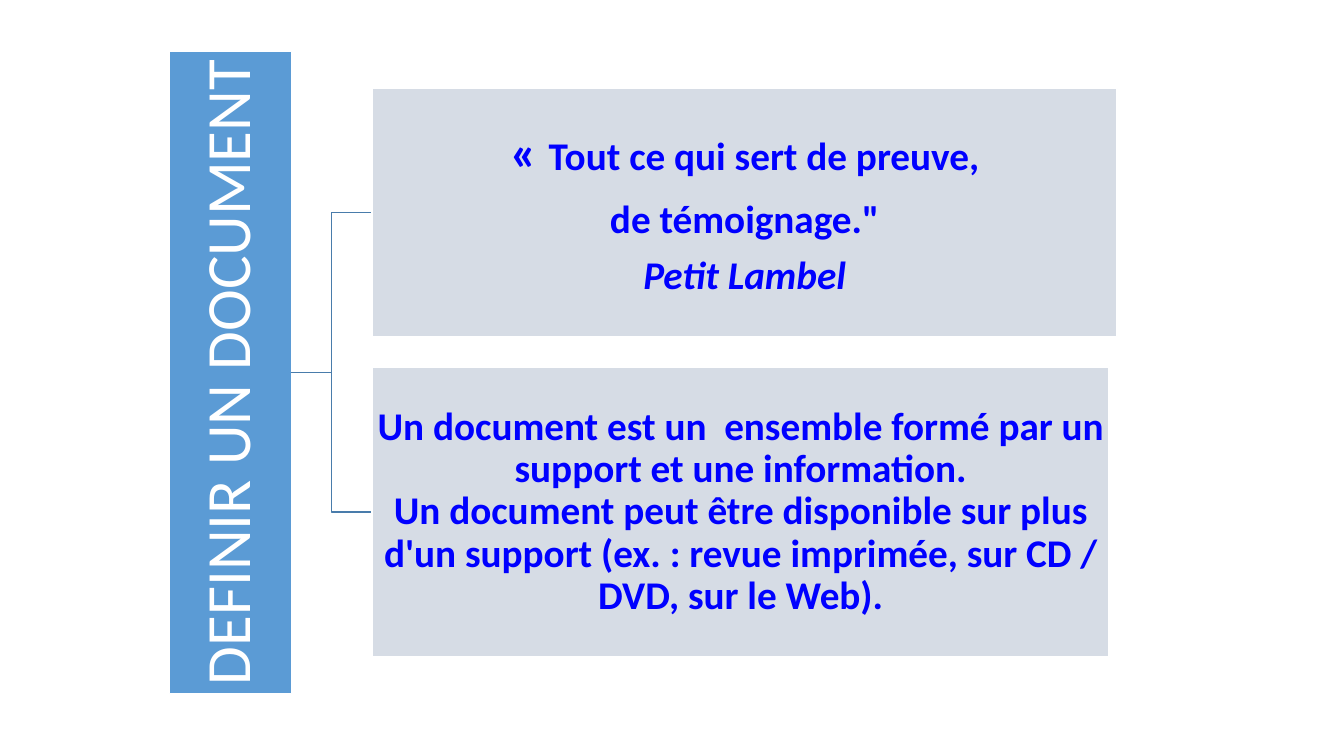
from dataclasses import dataclass

from pptx import Presentation
from pptx.dml.color import RGBColor
from pptx.enum import text
from pptx.shapes.autoshape import Shape
from pptx.enum import shapes
from pptx.slide import Slide
from pptx.util import Inches, Pt


@dataclass(frozen=True)
class Theme:
    font: str = "Calibri"
    bar: RGBColor = RGBColor(0x5B, 0x9B, 0xD5)
    panel: RGBColor = RGBColor(0xD6, 0xDC, 0xE5)
    link: RGBColor = RGBColor(0x49, 0x7C, 0xAB)
    white: RGBColor = RGBColor(0xFF, 0xFF, 0xFF)
    blue: RGBColor = RGBColor(0x00, 0x00, 0xFF)
    title: float = 45
    quote: float = 36
    body: float = 28


THEME = Theme()


@dataclass(frozen=True)
class Part:
    """A stretch of text in one style."""
    words: str
    size: float = THEME.body
    color: RGBColor = THEME.blue
    bold: bool = True
    italic: bool = False


@dataclass(frozen=True)
class Box:
    left: float
    top: float
    width: float
    height: float
    inset: float
    fill: RGBColor
    lines: list[list[Part]]

    @property
    def middle(self) -> float:
        return self.top + self.height / 2


BAR = Box(-0.9, 3.09, 6.37, 1.21, 0.03, THEME.bar,
          [[Part("DEFINIR UN DOCUMENT", THEME.title, THEME.white, bold=False)]])
PANELS = [
    Box(3.69, 0.88, 7.39, 2.46, 0.03, THEME.panel, [
        [Part("« ", THEME.quote), Part("Tout ce qui sert de preuve,")],
        [Part("de témoignage.\"")],
        [Part("Petit Lambel", italic=True)],
    ]),
    Box(3.69, 3.64, 7.31, 2.88, 0.02, THEME.panel, [
        [Part("Un document est un  ensemble formé par un support et une "
              "information.\nUn document peut être disponible sur plus d'un "
              "support (ex. : revue imprimée, sur CD / DVD, sur le Web).")],
    ]),
]


def write(shape: Shape, box: Box) -> None:
    frame = shape.text_frame
    frame.word_wrap = True
    frame.auto_size = text.MSO_AUTO_SIZE.NONE
    frame.vertical_anchor = text.MSO_ANCHOR.MIDDLE
    frame.margin_left = frame.margin_right = Inches(box.inset)
    frame.margin_top = frame.margin_bottom = Inches(box.inset)
    frame.text = "\n".join("" for _ in box.lines)
    for para, parts in zip(frame.paragraphs, box.lines):
        para.alignment = text.PP_ALIGN.CENTER
        para.line_spacing = 0.9
        para.space_after = Pt(0.35 * max(part.size for part in parts))
        for part in parts:
            start = len(para.runs)
            for index, words in enumerate(part.words.split("\n")):
                if index:
                    para.add_line_break()
                para.add_run().text = words
            for run in para.runs[start:]:
                font = run.font
                font.name, font.size = THEME.font, Pt(part.size)
                font.bold, font.italic = part.bold, part.italic
                font.color.rgb = part.color


def dress(shape: Shape, box: Box) -> None:
    """Fill and outline a box, then set its text."""
    shape.fill.solid()
    shape.fill.fore_color.rgb = box.fill
    shape.line.color.rgb = THEME.white
    shape.line.width = Pt(1)
    write(shape, box)


def link(slide: Slide, start: float, box: Box) -> None:
    """Draw the elbow from the bar's right edge to a panel's left side."""
    bend = (start + box.left) / 2
    points = [(bend, BAR.middle), (bend, box.middle), (box.left, box.middle)]
    pen = slide.shapes.build_freeform(Inches(start), Inches(BAR.middle))
    pen.add_line_segments([(Inches(x), Inches(y)) for x, y in points], close=False)
    elbow = pen.convert_to_shape()
    elbow.shadow.inherit = False
    elbow.fill.background()
    elbow.line.color.rgb = THEME.link
    elbow.line.width = Pt(1)


def main() -> None:
    deck = Presentation()
    deck.slide_width, deck.slide_height = Inches(13.33), Inches(7.5)
    slide = deck.slides.add_slide(deck.slide_layouts[5])

    title = slide.shapes.title
    title.left, title.top = Inches(BAR.left), Inches(BAR.top)
    title.width, title.height = Inches(BAR.width), Inches(BAR.height)
    title.rotation = 270
    dress(title, BAR)

    edge = BAR.left + (BAR.width + BAR.height) / 2
    for box in PANELS:
        link(slide, edge, box)
    for box in PANELS:
        panel = slide.shapes.add_shape(
            shapes.MSO_SHAPE.RECTANGLE, Inches(box.left), Inches(box.top),
            Inches(box.width), Inches(box.height))
        panel.shadow.inherit = False
        dress(panel, box)

    deck.save("out.pptx")


if __name__ == "__main__":
    main()
